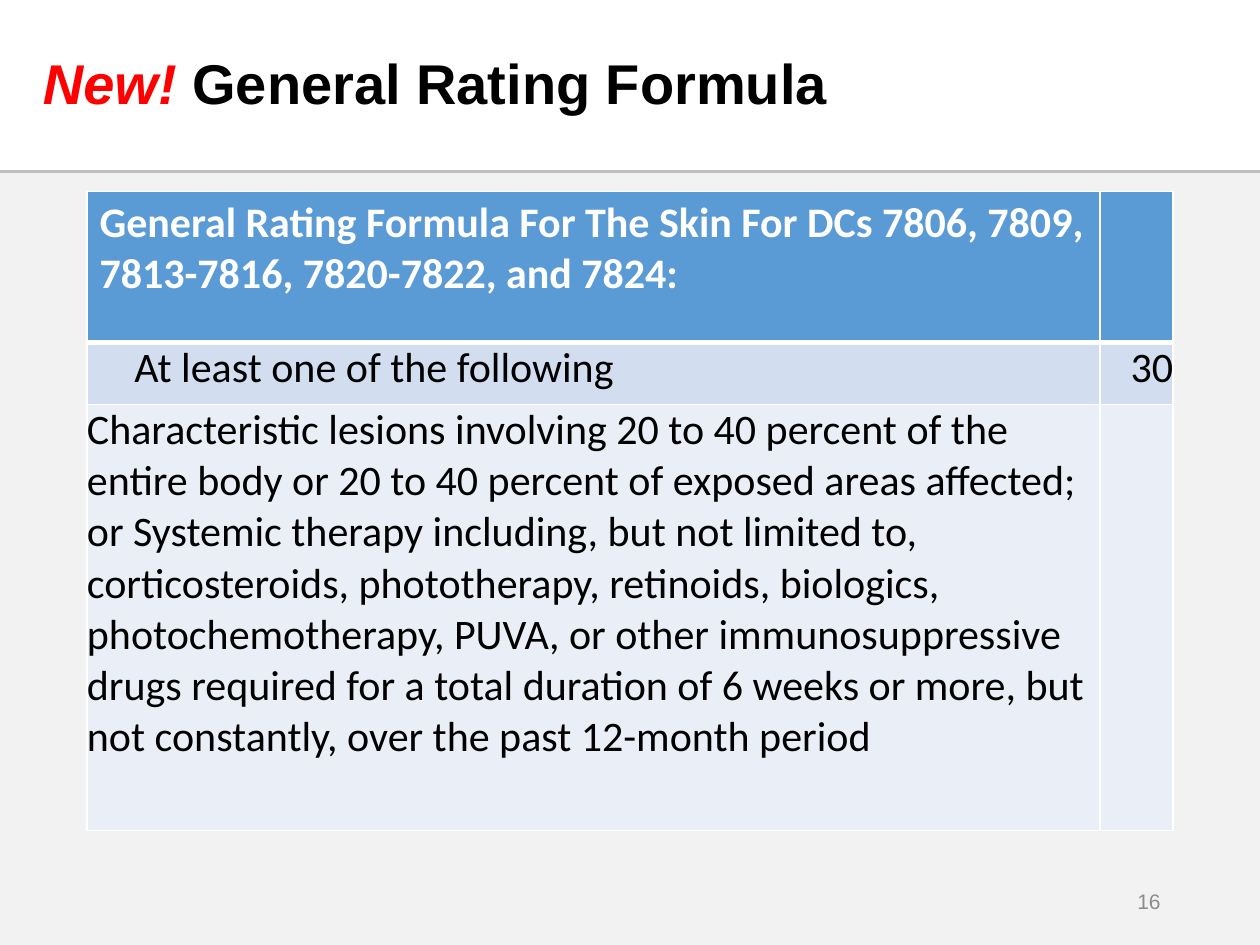
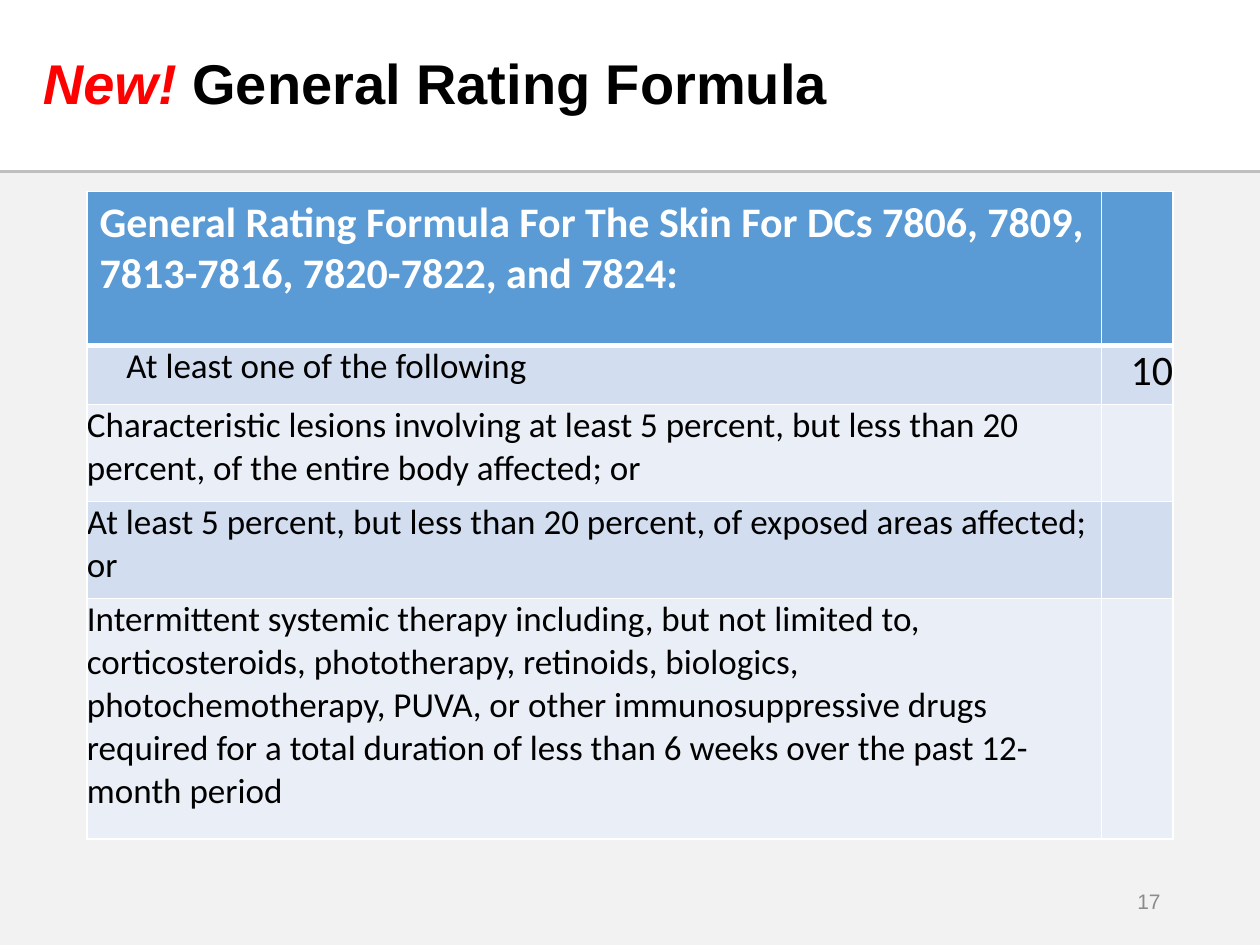
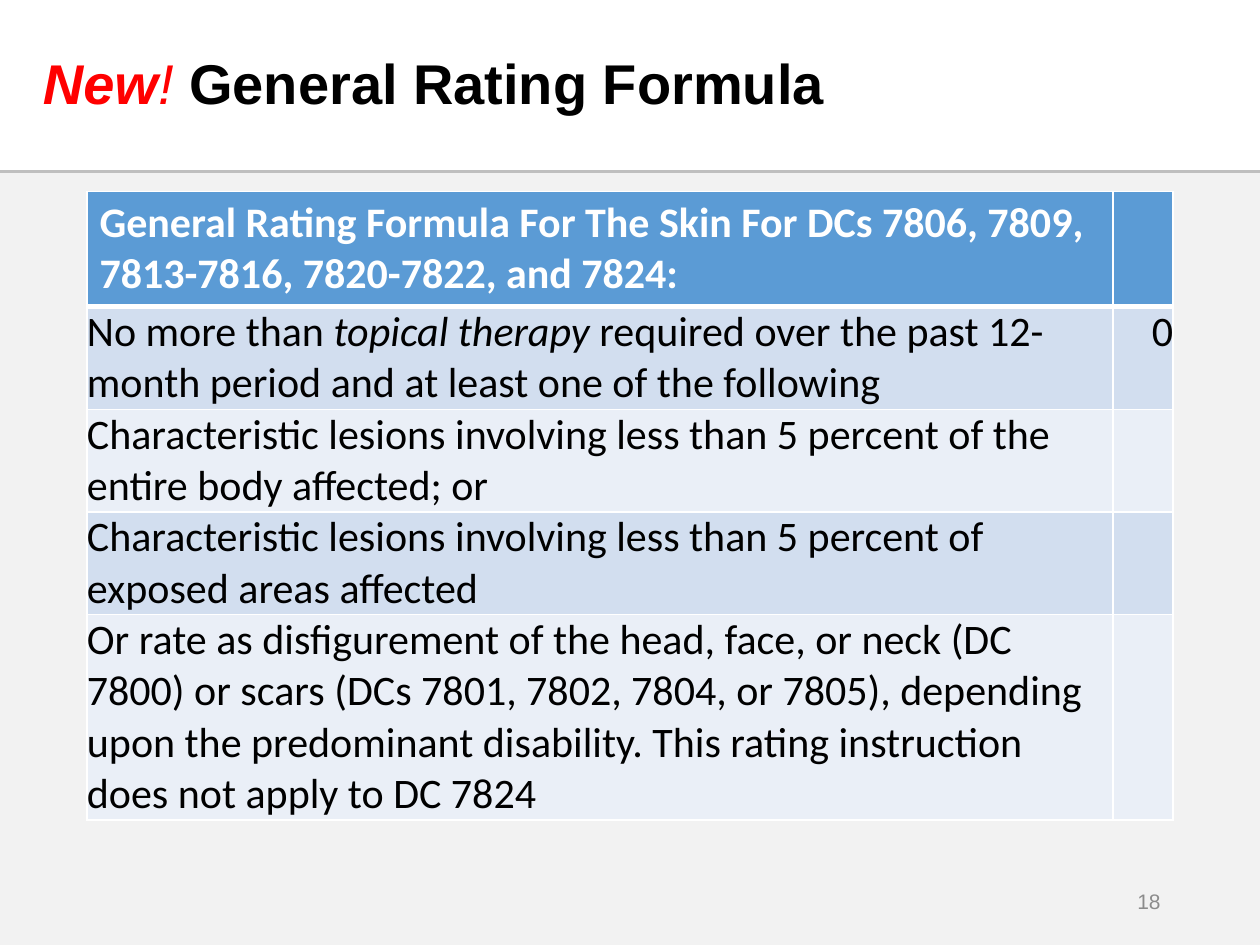
import dataclasses

import lxml.etree
import pptx
import pptx.dml.color
import pptx.enum.shapes
import pptx.enum.text
import pptx.oxml.ns
import pptx.util

ALIGN = pptx.enum.text.PP_ALIGN
MIDDLE = pptx.enum.text.MSO_ANCHOR.MIDDLE
qn = pptx.oxml.ns.qn


@dataclasses.dataclass(frozen=True)
class Theme:
    head: str = "Arial"
    body: str = "Calibri"
    ink: str = "000000"
    white: str = "FFFFFF"
    red: str = "FF0000"
    gray: str = "8C8C8C"
    panel: str = "F2F2F2"
    rule: str = "BFBFBF"
    blue: str = "5B9BD5"
    bands: tuple = ("D2DEEF", "EAEFF7")
    title: int = 32
    large: int = 24
    small: int = 20
    note: int = 12
    thin: int = 1
    thick: int = 3


def color(code):
    return pptx.dml.color.RGBColor.from_string(code)


def paint(shape, code):
    shape.fill.solid()
    shape.fill.fore_color.rgb = color(code)


def style(run, face, size, code, bold=False, slant=False):
    font = run.font
    font.name, font.size = face, pptx.util.Pt(size)
    font.color.rgb = color(code)
    font.bold, font.italic = bold, slant


def border(cell, code, top, low):
    """Set the four borders; they must stand before the fill in the cell."""
    props = cell._tc.get_or_add_tcPr()
    sides = (("lnL", 1), ("lnR", 1), ("lnT", top), ("lnB", low))
    for spot, (tag, width) in enumerate(sides):
        line = lxml.etree.Element(qn(f"a:{tag}"), w=str(pptx.util.Pt(width)))
        fill = lxml.etree.SubElement(line, qn("a:solidFill"))
        lxml.etree.SubElement(fill, qn("a:srgbClr"), val=code)
        props.insert(spot, line)


class Deck:
    """Places elements by percent of the slide's width and height."""

    def __init__(self, theme):
        self.theme = theme
        self.file = pptx.Presentation()
        self.file.slide_width = pptx.util.Inches(10)
        self.file.slide_height = pptx.util.Inches(7.5)
        self.layout = self.file.slide_layouts[5]
        self.slide = None

    def wide(self, share):
        return round(self.file.slide_width * share / 100)

    def high(self, share):
        return round(self.file.slide_height * share / 100)

    def area(self, left, top, width, height):
        return self.wide(left), self.high(top), self.wide(width), self.high(height)

    def start(self):
        first = self.slide is None
        self.slide = self.file.slides.add_slide(self.layout)
        if first:
            self.base()

    def base(self):
        """Draw the panel and its rule once, and move them to the layout."""
        shapes = self.slide.shapes
        panel = shapes.add_shape(pptx.enum.shapes.MSO_SHAPE.RECTANGLE,
                                 *self.area(0, 18.27, 100, 81.73))
        panel.shadow.inherit = False
        paint(panel, self.theme.panel)
        panel.line.fill.background()
        level = self.high(18.13)
        rule = shapes.add_connector(pptx.enum.shapes.MSO_CONNECTOR.STRAIGHT,
                                    0, level, self.wide(100), level)
        rule.line.color.rgb = color(self.theme.rule)
        rule.line.width = pptx.util.Pt(1.5)
        lxml.etree.SubElement(rule.element.spPr, qn("a:effectLst"))
        tree = self.layout.shapes.element
        for spot, shape in enumerate((panel, rule), 2):
            tree.insert(spot, shape.element)

    def title(self, flag, mark_bold):
        look = self.theme
        box = self.slide.shapes.title
        box.left, box.top, box.width, box.height = self.area(2.4, 2, 69.3, 14.27)
        frame = box.text_frame
        frame.auto_size = pptx.enum.text.MSO_AUTO_SIZE.NONE
        frame.vertical_anchor = MIDDLE
        para = frame.paragraphs[0]
        para.alignment, para.line_spacing = ALIGN.LEFT, 0.9
        parts = ((flag, look.red, True, True), ("!", look.red, mark_bold, True),
                 (" General Rating Formula", look.ink, True, False))
        for text, code, bold, slant in parts:
            run = para.add_run()
            run.text = text
            style(run, look.head, look.title, code, bold, slant)

    def number(self, value):
        box = self.slide.shapes.add_textbox(*self.area(70.6, 92.67, 22.5, 5.33))
        frame = box.text_frame
        frame.word_wrap, frame.vertical_anchor = True, MIDDLE
        frame.text = str(value)
        para = frame.paragraphs[0]
        para.alignment = ALIGN.RIGHT
        style(para.runs[0], self.theme.head, self.theme.note, self.theme.gray)

    def cell(self, cell, row, parts, size, align=ALIGN.LEFT, inset=False):
        """Fill one cell; every second part is in italics."""
        look, head = self.theme, row == 0
        paint(cell, look.blue if head else look.bands[(row - 1) % 2])
        border(cell, look.white, look.thick if row == 1 else look.thin,
               look.thick if head else look.thin)
        if not head:
            cell.margin_left = cell.margin_right = 0
            cell.margin_top = cell.margin_bottom = 0
        para = cell.text_frame.paragraphs[0]
        para.alignment = align
        if inset:
            props = para._p.get_or_add_pPr()
            props.set("marL", str(pptx.util.Pt(1.13 * size)))
            props.set("indent", "0")
        for spot, text in enumerate(parts):
            run = para.add_run()
            run.text = text
            style(run, look.body, size, look.white if head else look.ink,
                  head, spot % 2 == 1)

    def table(self, score, split, heights, texts, size, inset):
        large = self.theme.large
        grid = self.slide.shapes.add_table(
            len(heights), 2, *self.area(6.9, 20.27, 86.2, sum(heights))).table
        grid.columns[0].width = self.wide(split)
        grid.columns[1].width = self.wide(86.2 - split)
        for row, (height, parts) in enumerate(zip(heights, [HEAD] + texts)):
            grid.rows[row].height = self.high(height)
            self.cell(grid.cell(row, 0), row, parts, size if row else large,
                      inset=inset and row == 1)
            self.cell(grid.cell(row, 1), row, [score] if row == 1 else [],
                      large, ALIGN.RIGHT)


HEAD = ["General Rating Formula For The Skin For DCs 7806, 7809, "
        "7813-7816, 7820-7822, and 7824:"]
LEAD = ["At least one of the following"]
LOOK = Theme()
PAGES = [
    dict(score="30", split=80.4, heights=[16, 6.53, 45.07], size=LOOK.large,
         inset=True, texts=[
             LEAD,
             ["Characteristic lesions involving 20 to 40 percent of the entire "
              "body or 20 to 40 percent of exposed areas affected; or Systemic "
              "therapy including, but not limited to, corticosteroids, "
              "phototherapy, retinoids, biologics, photochemotherapy, PUVA, or "
              "other immunosuppressive drugs required for a total duration of "
              "6 weeks or more, but not constantly, over the past 12-month "
              "period"]]),
    dict(score="10", split=80.5, heights=[16.27, 6.27, 10.27, 10.27, 25.47],
         size=LOOK.small, inset=True, texts=[
             LEAD,
             ["Characteristic lesions involving at least 5 percent, but less "
              "than 20 percent, of the entire body affected; or"],
             ["At least 5 percent, but less than 20 percent, of exposed areas "
              "affected; or"],
             ["Intermittent systemic therapy including, but not limited to, "
              "corticosteroids, phototherapy, retinoids, biologics, "
              "photochemotherapy, PUVA, or other immunosuppressive drugs "
              "required for a total duration of less than 6 weeks over the "
              "past 12-month period"]]),
    dict(score="0", split=81.45, heights=[12.13, 10.87, 10.87, 10.87, 21.73],
         size=LOOK.large, inset=False, texts=[
             ["No more than ", "topical therapy ",
              "required over the past 12-month period and at least one of the "
              "following"],
             ["Characteristic lesions involving less than 5 percent of the "
              "entire body affected; or"],
             ["Characteristic lesions involving less than 5 percent of exposed "
              "areas affected"],
             ["Or rate as disfigurement of the head, face, or neck (DC 7800) "
              "or scars (DCs 7801, 7802, 7804, or 7805), depending upon the "
              "predominant disability. This rating instruction does not apply "
              "to DC 7824"]]),
]


def main():
    deck = Deck(LOOK)
    for count, page in enumerate(PAGES, 16):
        deck.start()
        deck.title("New", mark_bold=count < 18)
        deck.table(**page)
        deck.number(count)
    deck.file.save("out.pptx")


if __name__ == "__main__":
    main()
